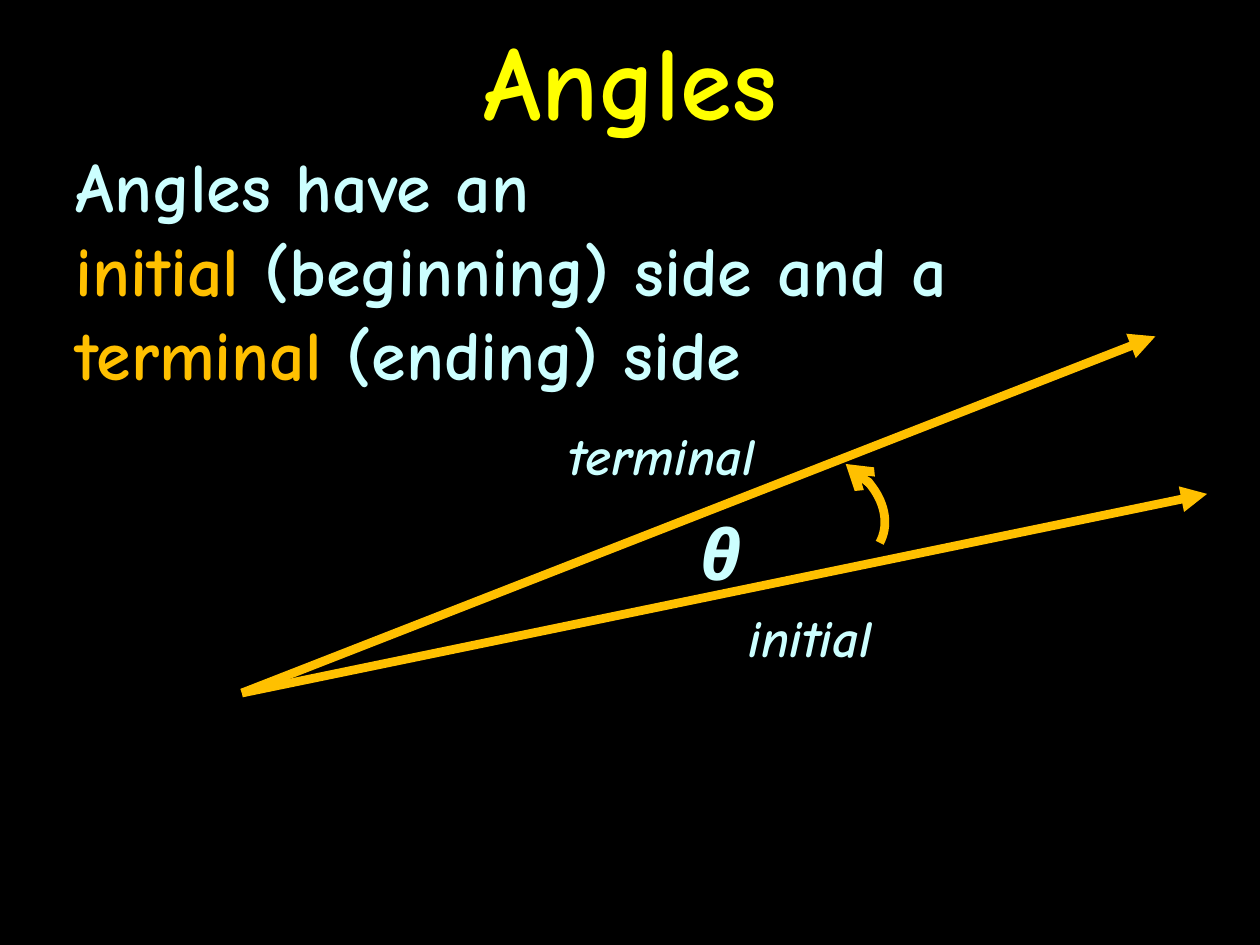
"""Build the slide that names the initial and terminal sides of an angle."""
from dataclasses import dataclass

from lxml.etree import SubElement
from pptx import Presentation
from pptx.dml.color import RGBColor
from pptx.enum.shapes import MSO_CONNECTOR, MSO_SHAPE
from pptx.enum.text import MSO_ANCHOR, MSO_AUTO_SIZE, PP_ALIGN
from pptx.oxml.ns import qn
from pptx.util import Inches, Pt

FONT = "Comic Neue"
COLORS = {"background": "000000", "title": "FFFF00", "text": "CCFFFF", "accent": "FFC000"}
LINE_WIDTH = 5
VERTEX = (1.92, 5.5)


@dataclass
class Label:
    text: str
    left: float
    top: float
    width: float
    height: float
    size: int = 30


SIDE_ENDS = [(9.58, 3.92), (9.17, 2.67)]
LABELS = [
    Label("terminal", 4.41, 3.31, 1.85, 0.61),
    Label("initial", 5.84, 4.75, 1.32, 0.61),
    Label("θ", 5.46, 4, 0.54, 0.77, size=40),
]
BODY_LINES = [
    [("Angles have an", "text")],
    [("initial", "accent"), (" (beginning) side and a", "text")],
    [("terminal", "accent"), (" (ending) side", "text")],
]


def color(name: str) -> RGBColor:
    return RGBColor.from_string(COLORS[name])


def add_text(paragraph, text: str, *, size: int, color_name: str = "text", italic: bool = False) -> None:
    run = paragraph.add_run()
    run.text = text
    run.font.name = FONT
    run.font.size = Pt(size)
    run.font.bold = True
    run.font.italic = italic
    run.font.color.rgb = color(color_name)


def place(shape, left: float, top: float, width: float, height: float) -> None:
    shape.left, shape.top = Inches(left), Inches(top)
    shape.width, shape.height = Inches(width), Inches(height)


def style_arrow(shape, end: str, kind: str) -> None:
    shape.line.color.rgb = color("accent")
    shape.line.width = Pt(LINE_WIDTH)
    outline = shape._element.spPr.find(qn("a:ln"))
    SubElement(outline, qn(f"a:{end}"), type=kind)


def add_title(slide) -> None:
    title = slide.shapes.title
    place(title, 0, 0, 10, 1.25)
    frame = title.text_frame
    frame.auto_size = MSO_AUTO_SIZE.NONE
    frame.vertical_anchor = MSO_ANCHOR.MIDDLE
    paragraph = frame.paragraphs[0]
    paragraph.alignment = PP_ALIGN.CENTER
    add_text(paragraph, "Angles", size=60, color_name="title")


def add_body(slide) -> None:
    body = slide.placeholders[1]
    place(body, 0.5, 1.08, 9, 6.17)
    frame = body.text_frame
    frame.auto_size = MSO_AUTO_SIZE.NONE
    for index, line in enumerate(BODY_LINES):
        paragraph = frame.add_paragraph() if index else frame.paragraphs[0]
        paragraph.space_before = Pt(0)
        properties = paragraph._p.get_or_add_pPr()
        properties.set("marL", "0")
        properties.set("indent", "0")
        SubElement(properties, qn("a:buNone"))
        for text, color_name in line:
            add_text(paragraph, text, size=40, color_name=color_name)


def add_side(slide, end: tuple[float, float]) -> None:
    points = [Inches(value) for value in (*VERTEX, *end)]
    side = slide.shapes.add_connector(MSO_CONNECTOR.STRAIGHT, *points)
    style_arrow(side, "tailEnd", "triangle")
    SubElement(side._element.spPr, qn("a:effectLst"))


def add_rotation_arc(slide) -> None:
    bounds = [Inches(value) for value in (5.97, 3.63, 1.08, 0.83)]
    arc = slide.shapes.add_shape(MSO_SHAPE.ARC, *bounds)
    arc.rotation = 29.2
    arc.shadow.inherit = False
    arc.fill.background()
    style_arrow(arc, "headEnd", "arrow")


def add_label(slide, label: Label) -> None:
    bounds = [Inches(value) for value in (label.left, label.top, label.width, label.height)]
    frame = slide.shapes.add_textbox(*bounds).text_frame
    frame.word_wrap = False
    frame.auto_size = MSO_AUTO_SIZE.SHAPE_TO_FIT_TEXT
    add_text(frame.paragraphs[0], label.text, size=label.size, italic=True)


def main() -> None:
    presentation = Presentation()
    presentation.slide_width, presentation.slide_height = Inches(10), Inches(7.5)
    slide = presentation.slides.add_slide(presentation.slide_layouts[1])
    slide.background.fill.solid()
    slide.background.fill.fore_color.rgb = color("background")
    add_title(slide)
    add_body(slide)
    for end in SIDE_ENDS:
        add_side(slide, end)
    add_rotation_arc(slide)
    for label in LABELS:
        add_label(slide, label)
    presentation.save("out.pptx")


if __name__ == "__main__":
    main()
